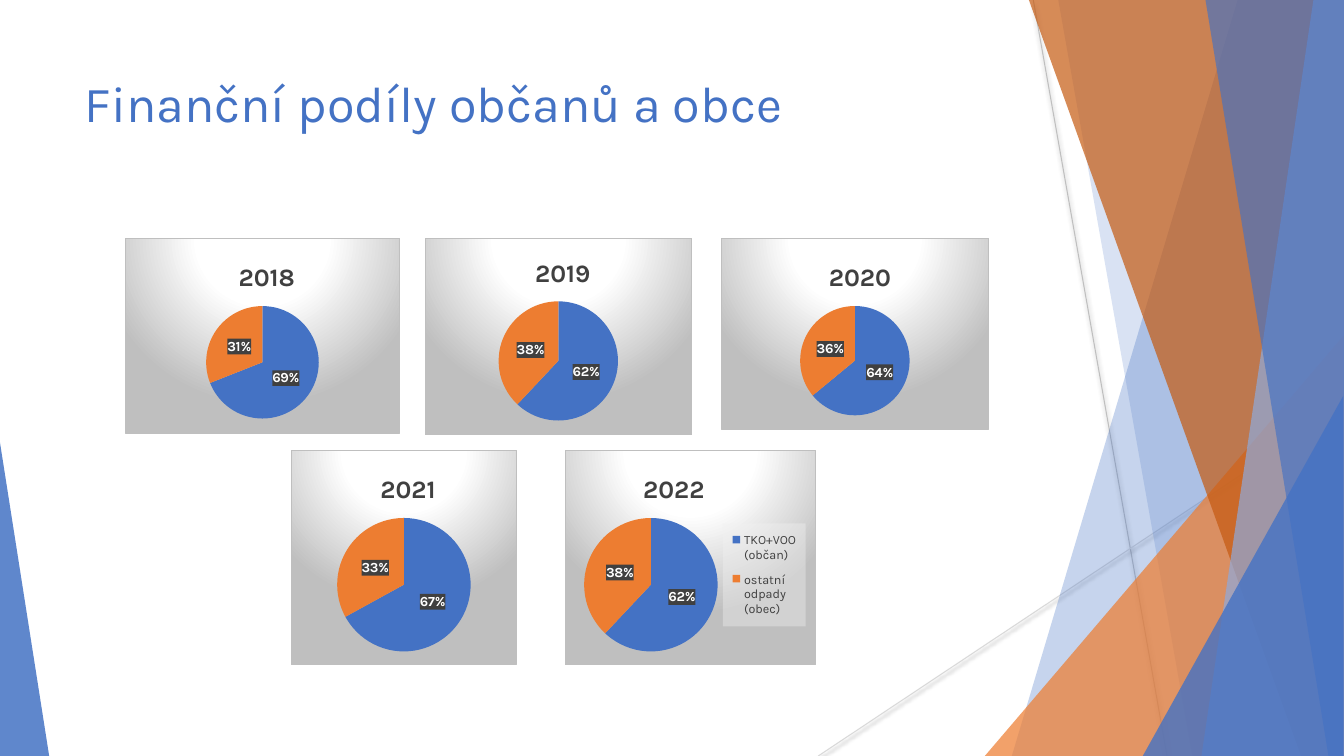
from pptx import Presentation
from pptx.chart.data import CategoryChartData as Data
from pptx.dml.color import RGBColor
from pptx.enum.chart import XL_CHART_TYPE as Kind, XL_LABEL_POSITION as Spot
from pptx.enum.chart import XL_LEGEND_POSITION as Side
from pptx.enum.shapes import MSO_CONNECTOR as Link, MSO_SHAPE as Form
from pptx.enum.text import MSO_ANCHOR as Anchor, PP_ALIGN as Align
from pptx.oxml import parse_xml
from pptx.oxml.ns import nsdecls, qn
from pptx.util import Cm, Pt

FONT = "Karla"
BLUE, ORANGE, DARK = "4472C4", "ED7D31", "404040"
WIDE, HIGH = 33.87, 19.05
hue = RGBColor.from_string
NS = nsdecls("c", "a")


def style(font, size, color, bold=False):
    font.name, font.size, font.bold = FONT, Pt(size), bold
    font.color.rgb = hue(color)


def place(node, index, **box):
    """Set the manual layout of a chart part, in fractions of the chart."""
    for old in node.findall(qn("c:layout")):
        node.remove(old)
    target = '<c:layoutTarget val="inner"/>' if index == 0 else ""
    modes = "".join(f'<c:{k}Mode val="edge"/>' for k in "xy")
    sizes = "".join(f'<c:{k} val="{v:.4f}"/>' for k, v in box.items())
    node.insert(index, parse_xml(
        f"<c:layout {NS}><c:manualLayout>{target}{modes}{sizes}"
        "</c:manualLayout></c:layout>"))


prs = Presentation()
prs.slide_width, prs.slide_height = Cm(WIDE), Cm(HIGH)
slide = prs.slides.add_slide(prs.slide_layouts[5])
shapes = slide.shapes

# Thin lines with a soft shadow
for x1, y1, x2, y2, color in [(26.04, 0, 29.41, HIGH, "BFBFBF"),
                              (WIDE, 10.24, 20.62, HIGH, "D9D9D9")]:
    line = shapes.add_connector(Link.STRAIGHT, Cm(x1), Cm(y1), Cm(x2), Cm(y2))
    line.line.color.rgb = hue(color)
    line.line.width = Pt(0.75)
    line.element.spPr.append(parse_xml(
        f'<a:effectLst {NS}><a:outerShdw blurRad="{Pt(3.1)}" dist="{Pt(1.6)}" '
        'dir="5400000" rotWithShape="0"><a:srgbClr val="000000">'
        '<a:alpha val="38000"/></a:srgbClr></a:outerShdw></a:effectLst>'))

# Bands (top x, foot x) reach the right edge; triangles are (box, tip)
decor = [
    ((31.19, 25.5), BLUE, 30),
    ((26.67, 30.05), BLUE, 20),
    ((24.82, 8.46, 9.04, 10.59, 1), ORANGE, 72),
    ((25.93, 32.79), "C55A11", 70),
    ((33.1, 30.28), "8FAADC", 70),
    ((30.38, 33.48), BLUE, 65),
    ((28.8, 9.98, 5.05, 9.07, 1), BLUE, 80),
    ((0, 11.15, 1.24, 7.9, 0), BLUE, 85),
]
for geo, color, alpha in decor:
    if len(geo) == 2:
        top, foot = geo
        pen = shapes.build_freeform(Cm(top), 0)
        pen.add_line_segments([(Cm(WIDE), 0), (Cm(WIDE), Cm(HIGH)),
                               (Cm(foot), Cm(HIGH))], close=True)
        piece = pen.convert_to_shape()
    else:
        piece = shapes.add_shape(Form.ISOSCELES_TRIANGLE, *map(Cm, geo[:4]))
        piece.adjustments[0] = geo[4]
    piece.shadow.inherit = False
    piece.line.fill.background()
    piece.fill.solid()
    piece.fill.fore_color.rgb = hue(color)
    tone = piece.element.spPr.find(qn("a:solidFill"))[0]
    tone.append(parse_xml(f'<a:alpha {NS} val="{alpha * 1000}"/>'))

# Title
title = shapes.title
title.left, title.top, title.width, title.height = map(
    Cm, (1.88, 1.7, 23.88, 3.66))
frame = title.text_frame
frame.word_wrap = True
frame.vertical_anchor = Anchor.TOP
frame.paragraphs[0].alignment = Align.LEFT
run = frame.paragraphs[0].add_run()
run.text = "Finanční podíly občanů a obce"
style(run.font, 36, BLUE)

# Yearly pies: year, share, chart box, pie (x, y, size), heading (x, y)
years = [
    ("2018", 69, (3.15, 6, 6.93, 4.93), (2.04, 1.71, 2.85), (2.75, 0.43)),
    ("2019", 62, (10.7, 6, 6.75, 4.97), (1.86, 1.59, 3.02), (2.67, 0.35)),
    ("2020", 64, (18.17, 6, 6.75, 4.83), (1.99, 1.71, 2.77), (2.6, 0.43)),
    ("2021", 67, (7.33, 11.34, 5.7, 5.43), (1.16, 1.71, 3.38), (2.14, 0.43)),
    ("2022", 62, (14.23, 11.34, 6.34, 5.43), (0.48, 1.71, 3.38), (1.86, 0.43)),
]
for year, share, box, pie, head in years:
    last = year == "2022"
    w, h = box[2:]
    data = Data()
    data.categories = (["TKO+VOO (občan)", "ostatní odpady (obec)"]
                       if last else ["1", "2"])
    data.add_series("Series 1", (share, 100 - share))
    chart = shapes.add_chart(Kind.PIE, *map(Cm, box), data).chart
    style(chart.font, 10, "000000")

    # Frame with a round gradient
    stops = "".join(f'<a:gs pos="{p}"><a:srgbClr val="{c}"/></a:gs>' for p, c in
                    [(0, "FFFFFF"), (39000, "FFFFFF"), (100000, "BFBFBF")])
    chart.element.find(qn("c:chart")).addnext(parse_xml(
        f'<c:spPr {NS}><a:gradFill><a:gsLst>{stops}</a:gsLst>'
        '<a:path path="circle"><a:fillToRect l="50000" t="-80000" r="50000" '
        f'b="180000"/></a:path></a:gradFill><a:ln w="{Pt(0.75)}"><a:solidFill>'
        '<a:srgbClr val="BFBFBF"/></a:solidFill></a:ln></c:spPr>'))

    # Heading
    chart.has_title = True
    run = chart.chart_title.text_frame.paragraphs[0].add_run()
    run.text = year
    style(run.font, 18, DARK, True)
    place(chart.chart_title.element, 1, x=head[0] / w, y=head[1] / h)

    # Slices and their labels
    plot = chart.plots[0]
    plot.vary_by_categories = True
    for i, color in enumerate((BLUE, ORANGE)):
        fill = plot.series[0].points[i].format.fill
        fill.solid()
        fill.fore_color.rgb = hue(color)
    plot.has_data_labels = True
    labels = plot.data_labels
    labels.show_percentage, labels.show_value = True, False
    labels.number_format, labels.number_format_is_linked = "0%", False
    labels.position = Spot.CENTER
    style(labels.font, 10, "FFFFFF", True)
    node = chart.element.find(".//" + qn("c:dLbls"))
    node.find(qn("c:numFmt")).addnext(parse_xml(
        f'<c:spPr {NS}><a:solidFill><a:srgbClr val="{DARK}"/></a:solidFill>'
        '</c:spPr>'))
    place(chart.element.find(".//" + qn("c:plotArea")), 0,
          x=pie[0] / w, y=pie[1] / h, w=pie[2] / w, h=pie[2] / h)

    # Legend
    chart.has_legend = last
    if last:
        key = chart.legend
        key.position = Side.RIGHT
        key.include_in_layout = False
        style(key.font, 9, DARK)
        place(key._element, 1, x=0.63, y=0.34, w=0.33, h=0.48)
        key._element.find(qn("c:txPr")).addprevious(parse_xml(
            f'<c:spPr {NS}><a:solidFill><a:srgbClr val="F2F2F2">'
            '<a:alpha val="39000"/></a:srgbClr></a:solidFill></c:spPr>'))

prs.save("out.pptx")
